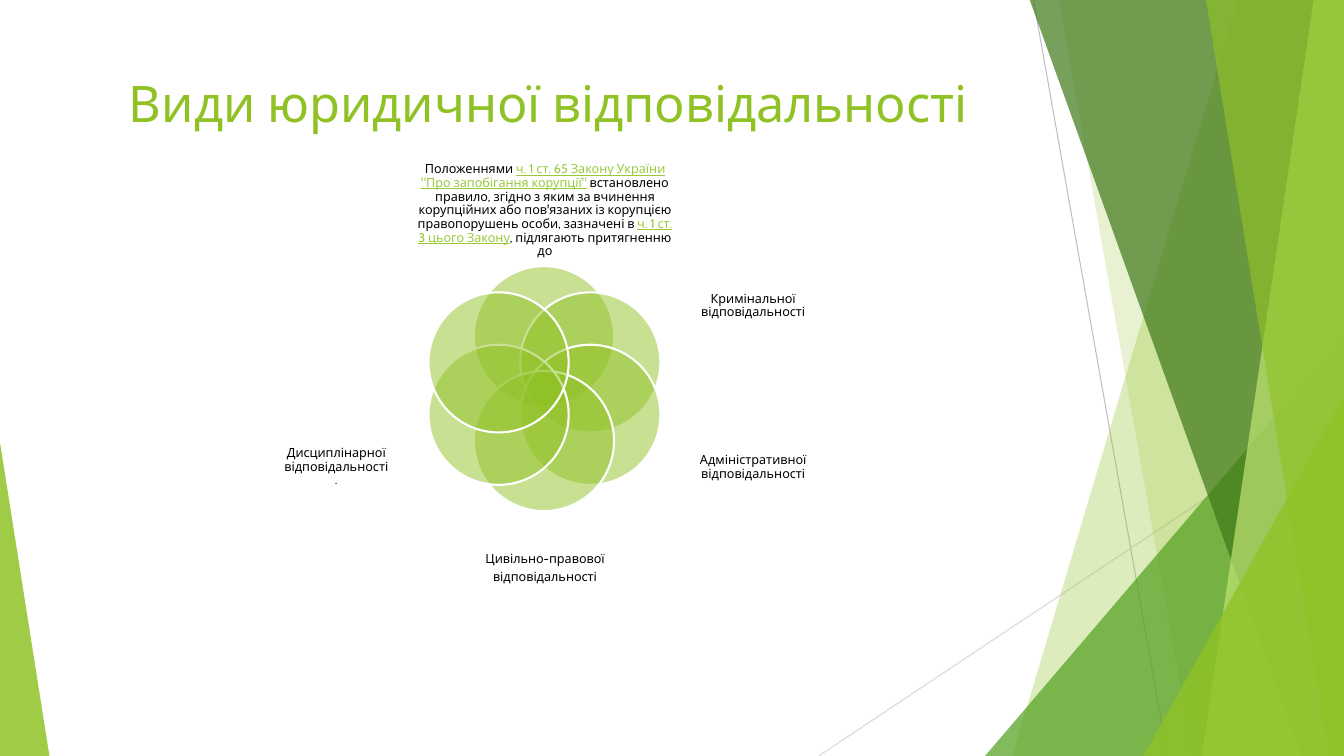
from math import cos, radians, sin

from lxml.etree import SubElement
from pptx import Presentation
from pptx.dml.color import RGBColor
from pptx.enum.shapes import MSO_CONNECTOR, MSO_SHAPE
from pptx.enum.text import MSO_ANCHOR, PP_ALIGN
from pptx.oxml.ns import qn
from pptx.util import Pt

PX = 9144  # EMU per px, 100 px to the inch
WIDTH, HEIGHT = 1333, 750
LIME, LINK, BLACK, WHITE = "90C226", "99CA3C", "000000", "FFFFFF"
color = RGBColor.from_string


def fill_shape(shape, hex_color, opacity):
    shape.shadow.inherit = False
    shape.fill.solid()
    shape.fill.fore_color.rgb = color(hex_color)
    solid_fill = shape.element.spPr.find(qn("a:solidFill"))
    SubElement(solid_fill[0], qn("a:alpha")).set("val", str(opacity * 1000))
    shape.line.fill.background()


def add_text(paragraphs, box, size=9, font_color=BLACK, anchor=MSO_ANCHOR.MIDDLE,
             margin=0, line_spacing=0.9, space_after=3):
    """Each paragraph is a list of runs; odd runs are shown as links."""
    frame = slide.shapes.add_textbox(*[value * PX for value in box]).text_frame
    frame.word_wrap = True
    frame.vertical_anchor = anchor
    frame.margin_left = frame.margin_right = 2 * margin * PX
    frame.margin_top = frame.margin_bottom = margin * PX
    for index, runs in enumerate(paragraphs):
        paragraph = frame.add_paragraph() if index else frame.paragraphs[0]
        paragraph.alignment = PP_ALIGN.CENTER
        paragraph.line_spacing = line_spacing
        paragraph.space_after = Pt(space_after)
        for position, text in enumerate(runs):
            is_link = position % 2 == 1
            run = paragraph.add_run()
            run.text = text
            run.font.name = "Cabin"
            run.font.size = Pt(size)
            run.font.underline = is_link
            run.font.color.rgb = color(LINK if is_link else font_color)


presentation = Presentation()
presentation.slide_width = WIDTH * PX
presentation.slide_height = HEIGHT * PX
slide = presentation.slides.add_slide(presentation.slide_layouts[6])

# Thin background lines
for ends, line_color in [((1025, 0, 1158, HEIGHT), "BFBFBF"),
                         ((WIDTH, 403, 812, HEIGHT), "D9D9D9")]:
    connector = slide.shapes.add_connector(
        MSO_CONNECTOR.STRAIGHT, *[value * PX for value in ends])
    connector.line.color.rgb = color(line_color)
    connector.line.width = Pt(0.75)
    SubElement(connector.element.spPr, qn("a:effectLst"))

# Facets: bands give top-left and bottom-left x, triangles give left, top, width, apex
facets = [
    ("band", (1228, 1004), LIME, 30),
    ("band", (1050, 1183), LIME, 20),
    ("triangle", (977, 333, 356, 1), "54A021", 72),
    ("band", (1021, 1291), "3F7819", 70),
    ("band", (1303, 1192), "C0E474", 70),
    ("band", (1196, 1318), LIME, 65),
    ("triangle", (1134, 393, 199, 1), LIME, 80),
    ("triangle", (0, 439, 49, 0), LIME, 85),
]
for kind, geometry, facet_color, opacity in facets:
    if kind == "band":
        top_x, bottom_x = geometry
        builder = slide.shapes.build_freeform(top_x, -1, scale=PX)
        builder.add_line_segments([(WIDTH, -1), (WIDTH, HEIGHT), (bottom_x, HEIGHT)])
        facet = builder.convert_to_shape()
    else:
        left, top, width, apex = geometry
        facet = slide.shapes.add_shape(
            MSO_SHAPE.ISOSCELES_TRIANGLE,
            left * PX, top * PX, width * PX, (HEIGHT - top) * PX)
        facet.adjustments[0] = apex
    fill_shape(facet, facet_color, opacity)

# Title
add_text([["Види юридичної відповідальності"]], (74, 67, 940, 144), size=36,
         font_color=LIME, anchor=MSO_ANCHOR.TOP, margin=5, line_spacing=1, space_after=0)

# Six overlapping circles, clockwise from the top, each with its label
labels = [
    ([["Положеннями ", "ч. 1 ст. 65 Закону України \"Про запобігання корупції\"",
       " встановлено правило, згідно з яким за вчинення корупційних або пов'язаних "
       "із корупцією правопорушень особи, зазначені в ",
       "ч. 1 ст. 3 цього Закону", ", підлягають притягненню до"]],
     (410, 162, 261, 94)),
    ([["Кримінальної відповідальності"]], (665, 252, 164, 103)),
    ([["Адміністративної відповідальності"]], (665, 406, 164, 116)),
    ([["Цивільно-правової"], ["відповідальності"]], (454, 517, 173, 94)),
    ([["Дисциплінарної відповідальності."]], (281, 403, 105, 121)),
    None,
]
CENTER_X, CENTER_Y, ORBIT, DIAMETER = 540, 386, 52, 139
for index, label in enumerate(labels):
    angle = radians(60 * index - 90)
    left = round(CENTER_X + ORBIT * cos(angle) - DIAMETER / 2)
    top = round(CENTER_Y + ORBIT * sin(angle) - DIAMETER / 2)
    circle = slide.shapes.add_shape(
        MSO_SHAPE.OVAL, left * PX, top * PX, DIAMETER * PX, DIAMETER * PX)
    fill_shape(circle, LIME, 50)
    circle.line.color.rgb = color(WHITE)
    circle.line.width = Pt(1.5)
    if label:
        add_text(*label)

presentation.save("out.pptx")
